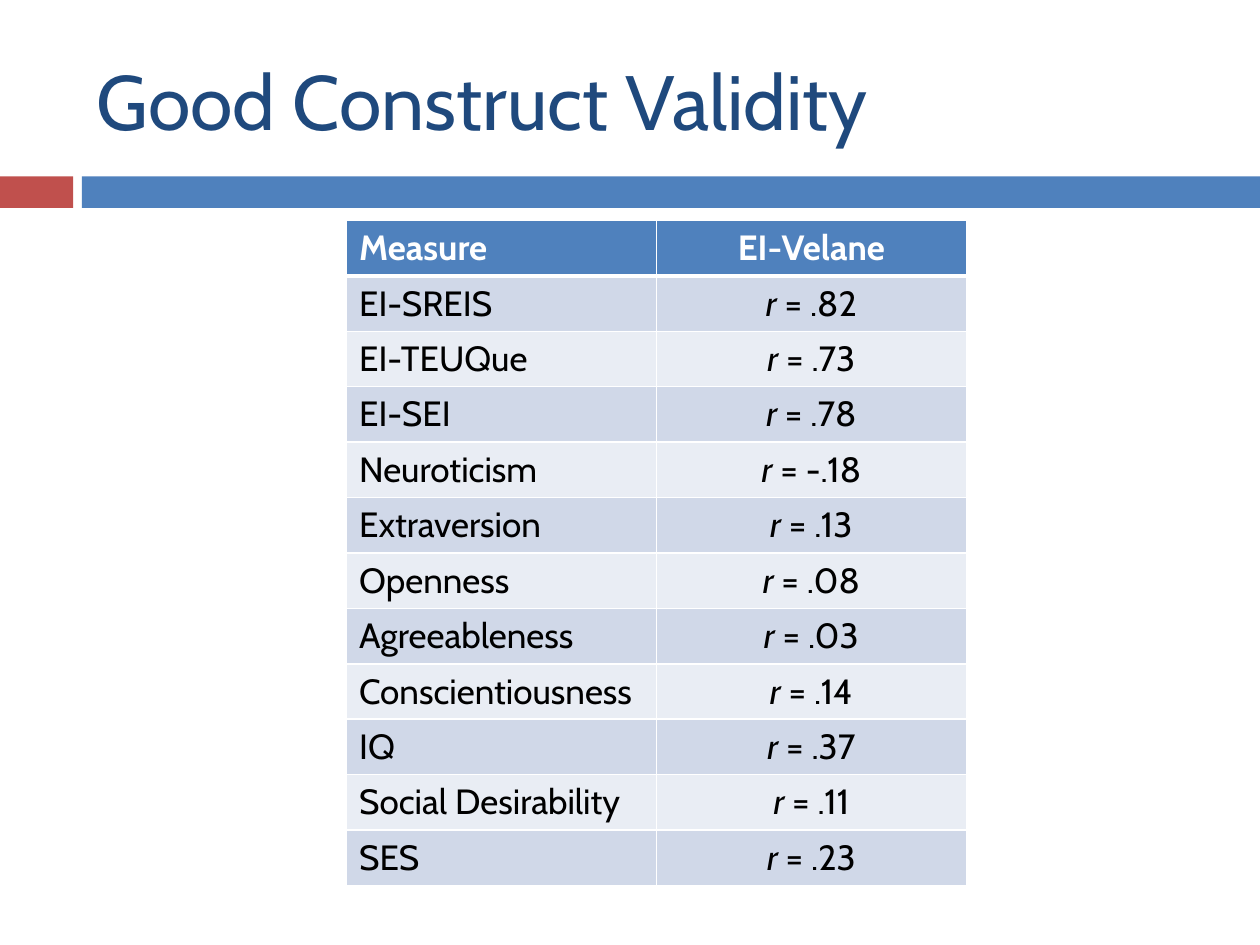
from lxml import etree
from pptx import Presentation, util as u
from pptx.dml.color import RGBColor
from pptx.enum import shapes, text
from pptx.oxml.ns import qn

TITLE = "Good Construct Validity"
HEADER = ("Measure", "EI-Velane")
CORRELATIONS = [
    ("EI-SREIS", ".82"),
    ("EI-TEUQue", ".73"),
    ("EI-SEI", ".78"),
    ("Neuroticism", "-.18"),
    ("Extraversion", ".13"),
    ("Openness", ".08"),
    ("Agreeableness", ".03"),
    ("Conscientiousness", ".14"),
    ("IQ", ".37"),
    ("Social Desirability", ".11"),
    ("SES", ".23"),
]
THEME = {
    "font": "Cabin", "title_size": 44, "table_size": 20,
    "title": "1F497D", "accent": "C0504D", "primary": "4F81BD",
    "header_text": "FFFFFF", "body_text": "000000", "border": "FFFFFF",
    "bands": ("D0D8E8", "E9EDF4"),
}
BARS = [(0, 0.58, "accent"), (0.65, 9.35, "primary")]
BAR_TOP, BAR_HEIGHT = 1.4, 0.25
TITLE_BOX = (0.67, 0.25, 8.92, 1.08)
TABLE_LEFT, TABLE_TOP = 2.75, 1.75
COLUMN_WIDTH, ROW_HEIGHT = 2.46, 0.44


def color(value):
    return RGBColor.from_string(value)


def add_run(paragraph, words, size, ink, **formats):
    run = paragraph.add_run()
    run.text = words
    formats = {"name": THEME["font"], "size": u.Pt(size), **formats}
    for name, value in formats.items():
        setattr(run.font, name, value)
    run.font.color.rgb = color(ink)


def set_borders(cell, bottom_width):
    """Draw all four cell borders; they must come before the fill in the XML."""
    properties = cell._tc.get_or_add_tcPr()
    widths = {"lnL": 1, "lnR": 1, "lnT": 1, "lnB": bottom_width}
    for index, (side, width) in enumerate(widths.items()):
        line = etree.Element(qn(f"a:{side}"), w=str(u.Pt(width)))
        fill = etree.SubElement(line, qn("a:solidFill"))
        etree.SubElement(fill, qn("a:srgbClr"), val=THEME["border"])
        properties.insert(index, line)


def add_bars(slide):
    for left, width, key in BARS:
        box = (u.Inches(n) for n in (left, BAR_TOP, width, BAR_HEIGHT))
        bar = slide.shapes.add_shape(shapes.MSO_SHAPE.RECTANGLE, *box)
        bar.shadow.inherit = False
        bar.fill.solid()
        bar.fill.fore_color.rgb = color(THEME[key])
        bar.line.fill.background()


def add_title(slide):
    frame = slide.shapes.add_textbox(*map(u.Inches, TITLE_BOX)).text_frame
    frame.word_wrap = True
    frame.vertical_anchor = text.MSO_ANCHOR.MIDDLE
    add_run(frame.paragraphs[0], TITLE, THEME["title_size"], THEME["title"])


def add_table(slide):
    rows = [HEADER, *CORRELATIONS]
    box = (TABLE_LEFT, TABLE_TOP, COLUMN_WIDTH * len(HEADER), ROW_HEIGHT * len(rows))
    table = slide.shapes.add_table(len(rows), len(HEADER), *map(u.Inches, box)).table
    size = THEME["table_size"]
    for row_index, row in enumerate(rows):
        is_header = row_index == 0
        table.rows[row_index].height = u.Inches(ROW_HEIGHT)
        fill = THEME["primary"] if is_header else THEME["bands"][(row_index - 1) % 2]
        for column_index, words in enumerate(row):
            cell = table.cell(row_index, column_index)
            cell.fill.solid()
            cell.fill.fore_color.rgb = color(fill)
            set_borders(cell, 3 if is_header else 1)
            paragraph = cell.text_frame.paragraphs[0]
            if column_index == 1:
                paragraph.alignment = text.PP_ALIGN.CENTER
            if is_header:
                add_run(paragraph, words, size, THEME["header_text"], bold=True)
                continue
            cell.vertical_anchor = text.MSO_ANCHOR.MIDDLE
            if column_index == 1:
                add_run(paragraph, "r", size, THEME["body_text"], italic=True)
                words = f" = {words}"
            add_run(paragraph, words, size, THEME["body_text"])


def main():
    presentation = Presentation()
    presentation.slide_width = u.Inches(10)
    presentation.slide_height = u.Inches(7.5)
    slide = presentation.slides.add_slide(presentation.slide_layouts[6])
    add_bars(slide)
    add_title(slide)
    add_table(slide)
    presentation.save("out.pptx")


if __name__ == "__main__":
    main()
